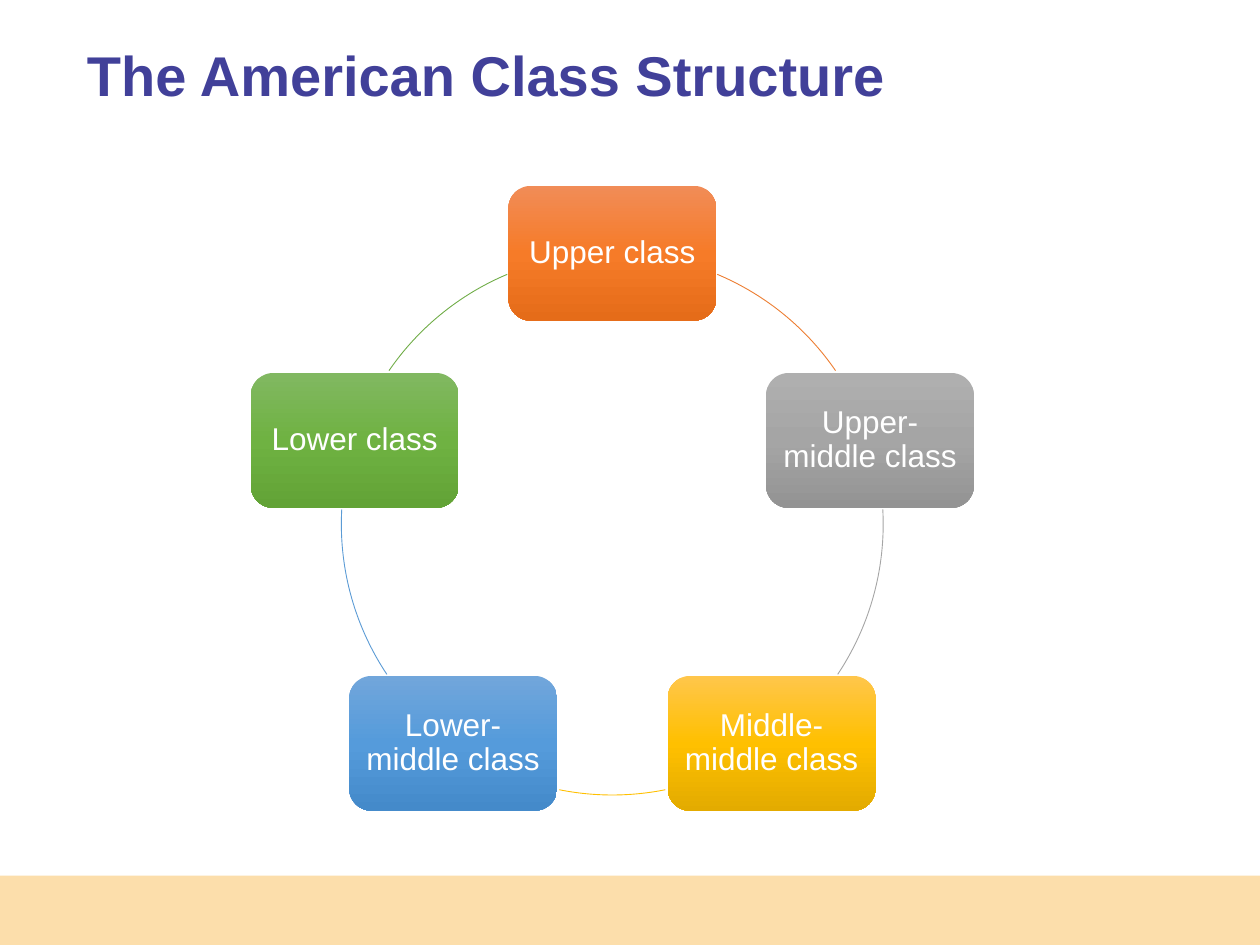
from copy import deepcopy
from math import cos, radians, sin

from pptx import Presentation
from pptx.dml.color import RGBColor
from pptx.enum.shapes import MSO_SHAPE
from pptx.enum.text import MSO_ANCHOR, PP_ALIGN
from pptx.oxml.ns import qn
from pptx.util import Inches, Pt

RECT = MSO_SHAPE.RECTANGLE
ROUND = MSO_SHAPE.ROUNDED_RECTANGLE
ARC = MSO_SHAPE.ARC
MIDDLE = MSO_ANCHOR.MIDDLE
LEFT, CENTER = PP_ALIGN.LEFT, PP_ALIGN.CENTER

FONT = "Arial"
NAVY = RGBColor(0x41, 0x40, 0x99)
SAND = RGBColor(0xFC, 0xDE, 0xAB)
WHITE = RGBColor(0xFF, 0xFF, 0xFF)
ORANGE = RGBColor(0xED, 0x7D, 0x31)
GRAY = RGBColor(0xA5, 0xA5, 0xA5)
GOLD = RGBColor(0xFF, 0xC0, 0x00)
BLUE = RGBColor(0x5B, 0x9B, 0xD5)
GREEN = RGBColor(0x70, 0xAD, 0x47)
ORANGES = [RGBColor(0xF1, 0x8C, 0x57), RGBColor(0xF6, 0x7B, 0x28), RGBColor(0xE5, 0x6C, 0x19)]
GRAYS = [RGBColor(0xAF, 0xAF, 0xAF), GRAY, RGBColor(0x93, 0x93, 0x93)]
GOLDS = [RGBColor(0xFF, 0xC6, 0x4B), GOLD, RGBColor(0xE3, 0xAB, 0x00)]
BLUES = [RGBColor(0x71, 0xA6, 0xDB), RGBColor(0x55, 0x9B, 0xDB), RGBColor(0x44, 0x8A, 0xCA)]
GREENS = [RGBColor(0x81, 0xB8, 0x61), RGBColor(0x6F, 0xB2, 0x42), RGBColor(0x62, 0xA3, 0x36)]

CLASSES = [
    ("Upper class", ORANGES, ORANGE, (-67.2, -34.5)),
    ("Upper-middle class", GRAYS, GRAY, (-3.1, 33.7)),
    ("Middle-middle class", GOLDS, GOLD, (78.7, 101.3)),
    ("Lower-middle class", BLUES, BLUE, (146.3, 183.1)),
    ("Lower class", GREENS, GREEN, (214.5, 247.2)),
]


def add_shape(slide, kind, box):
    shape = slide.shapes.add_shape(kind, *(Inches(n) for n in box))
    shape.shadow.inherit = False
    return shape


def set_text(frame, text, size, color, align, inset):
    frame.word_wrap = True
    frame.vertical_anchor = MIDDLE
    frame.margin_left = frame.margin_right = Inches(inset)
    frame.margin_top = frame.margin_bottom = Inches(inset)
    frame.text = text
    para = frame.paragraphs[0]
    para.alignment = align
    para.line_spacing = 0.9
    para.font.name = FONT
    para.font.size = Pt(size)
    para.font.color.rgb = color
    return para


def add_title(slide, box):
    title = slide.shapes.title
    title.left, title.top, title.width, title.height = (Inches(n) for n in box)
    para = set_text(title.text_frame, "The American Class Structure", 32, NAVY, LEFT, 0)
    para.font.bold = True


def add_band(slide, box):
    band = add_shape(slide, RECT, box)
    band.fill.solid()
    band.fill.fore_color.rgb = SAND
    band.line.fill.background()


def shade(shape, colors):
    fill = shape.fill
    fill.gradient()
    fill.gradient_angle = 270
    first = shape._element.spPr.find(".//" + qn("a:gs"))
    first.addnext(deepcopy(first))
    for stop, color, place in zip(fill.gradient_stops, colors, (0, 0.5, 1)):
        stop.color.rgb = color
        stop.position = place


def add_node(slide, box, text, colors):
    node = add_shape(slide, ROUND, box)
    shade(node, colors)
    node.line.fill.background()
    set_text(node.text_frame, text, 18, WHITE, CENTER, 0.07)


def add_arc(slide, box, color, angles):
    arc = add_shape(slide, ARC, box)
    for index, angle in enumerate(angles):
        arc.adjustments[index] = angle % 360 * 0.6
    arc.fill.background()
    arc.line.color.rgb = color
    arc.line.width = Pt(0.5)


def add_cycle(slide, box):
    left, top, size, _ = box
    radius = size / 2
    wide, high = 1.65, 1.07
    for index, (text, colors, line, angles) in enumerate(CLASSES):
        turn = radians(index * 360 / len(CLASSES) - 90)
        x = left + radius + radius * cos(turn) - wide / 2
        y = top + radius + radius * sin(turn) - high / 2
        add_node(slide, (x, y, wide, high), text, colors)
        add_arc(slide, box, line, angles)


def main():
    deck = Presentation()
    deck.slide_width, deck.slide_height = Inches(10), Inches(7.5)
    slide = deck.slides.add_slide(deck.slide_layouts[5])
    add_band(slide, (0, 6.95, 10, 0.55))
    add_title(slide, (0.69, 0, 8.62, 1.25))
    add_cycle(slide, (2.71, 2.01, 4.3, 4.3))
    deck.save("out.pptx")


if __name__ == "__main__":
    main()
